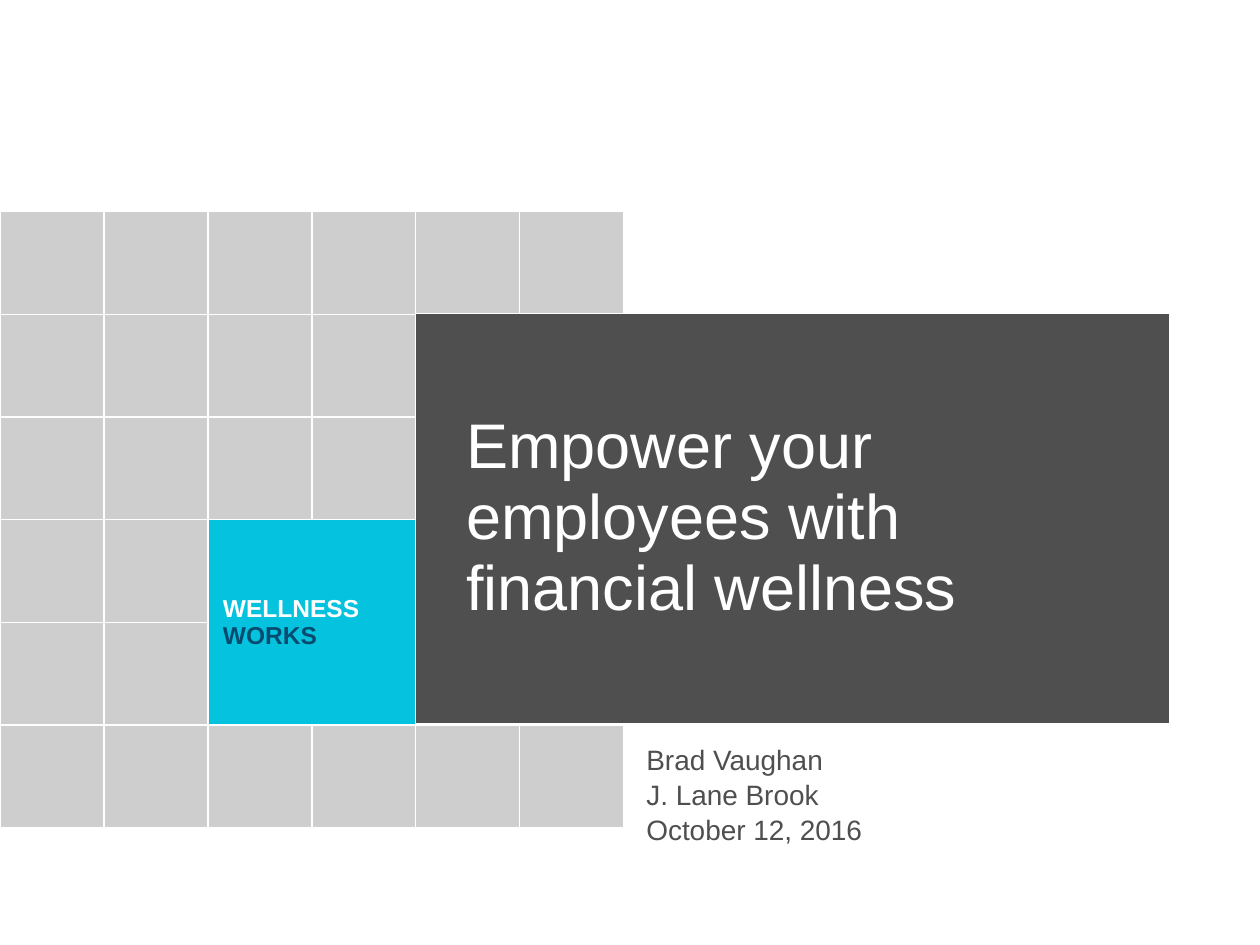
from lxml import etree
from pptx import Presentation
from pptx.dml.color import RGBColor
from pptx.enum import text
from pptx.oxml import ns
from pptx.util import Inches, Pt

WHITE = RGBColor(0xFF, 0xFF, 0xFF)
LIGHT_GRAY = RGBColor(0xCE, 0xCE, 0xCE)
DARK_GRAY = RGBColor(0x4F, 0x4F, 0x4F)
CYAN = RGBColor(0x05, 0xC3, 0xDE)
NAVY = RGBColor(0x05, 0x4C, 0x70)
FONT = "Arial"
GRID_SIZE = 6


def set_font(paragraph, size, color, bold=False):
    font = paragraph.font
    font.name, font.size, font.bold = FONT, Pt(size), bold
    font.color.rgb = color


def place(shape, left, top, width, height):
    shape.left, shape.top, shape.width, shape.height = left, top, width, height


def set_margins(target, left, top, right, bottom):
    target.margin_left, target.margin_top = Inches(left), Inches(top)
    target.margin_right, target.margin_bottom = Inches(right), Inches(bottom)


def set_borders(cell, color, width):
    properties = cell._tc.get_or_add_tcPr()
    for index, side in enumerate(("lnL", "lnR", "lnT", "lnB")):
        line = etree.Element(ns.qn(f"a:{side}"), w=str(width))
        fill = etree.SubElement(line, ns.qn("a:solidFill"))
        etree.SubElement(fill, ns.qn("a:srgbClr"), val=str(color))
        properties.insert(index, line)


def add_tile_grid(slide, left, top, width, height):
    """Gray tiles with one merged label tile, behind everything else."""
    frame = slide.shapes.add_table(GRID_SIZE, GRID_SIZE, left, top, width, height)
    table = frame.table
    table.first_row = table.horz_banding = False
    for column in table.columns:
        column.width = width // GRID_SIZE
    for row in table.rows:
        row.height = height // GRID_SIZE
    for cell in table.iter_cells():
        cell.fill.solid()
        cell.fill.fore_color.rgb = LIGHT_GRAY
        set_borders(cell, WHITE, Pt(1))

    label = table.cell(3, 2)
    label.merge(table.cell(4, 3))
    label.fill.fore_color.rgb = CYAN
    label.vertical_anchor = text.MSO_ANCHOR.MIDDLE
    set_margins(label, 0.12, 0.06, 0.12, 0.06)
    label.text = "WELLNESS\nWORKS"
    for paragraph, color in zip(label.text_frame.paragraphs, (WHITE, NAVY)):
        set_font(paragraph, 14, color, bold=True)

    slide.shapes._spTree.insert(2, frame._element)


def fill_title(title, left, top, width, height):
    place(title, left, top, width, height)
    title.fill.solid()
    title.fill.fore_color.rgb = DARK_GRAY
    title.line.color.rgb = WHITE
    title.line.width = Pt(0.75)
    frame = title.text_frame
    frame.text = "Empower your employees with financial wellness"
    frame.word_wrap = True
    frame.auto_size = text.MSO_AUTO_SIZE.NONE
    frame.vertical_anchor = text.MSO_ANCHOR.MIDDLE
    set_margins(frame, 0.4, 0.3, 0.3, 0.3)
    paragraph = frame.paragraphs[0]
    paragraph.alignment = text.PP_ALIGN.LEFT
    paragraph.line_spacing = 0.94
    set_font(paragraph, 36, WHITE)


def fill_speaker(subtitle, left, top, width, height):
    place(subtitle, left, top, width, height)
    frame = subtitle.text_frame
    frame.text = "Brad Vaughan\vJ. Lane Brook\nOctober 12, 2016"
    frame.word_wrap = True
    frame.auto_size = text.MSO_AUTO_SIZE.NONE
    frame.vertical_anchor = text.MSO_ANCHOR.TOP
    set_margins(frame, 0, 0, 0, 0)
    for paragraph in frame.paragraphs:
        paragraph.alignment = text.PP_ALIGN.LEFT
        paragraph.line_spacing = 1.05
        paragraph.space_before = Pt(0)
        set_font(paragraph, 16, DARK_GRAY)


def main():
    presentation = Presentation()
    presentation.slide_width, presentation.slide_height = Inches(10), Inches(7.5)
    slide = presentation.slides.add_slide(presentation.slide_layouts[0])
    add_tile_grid(slide, Inches(0), Inches(1.68), Inches(4.95), Inches(4.89))
    fill_title(slide.shapes.title, Inches(3.3), Inches(2.49), Inches(5.98), Inches(3.25))
    fill_speaker(slide.placeholders[1], Inches(5.13), Inches(5.88), Inches(4.61), Inches(0.68))
    presentation.save("out.pptx")


if __name__ == "__main__":
    main()
